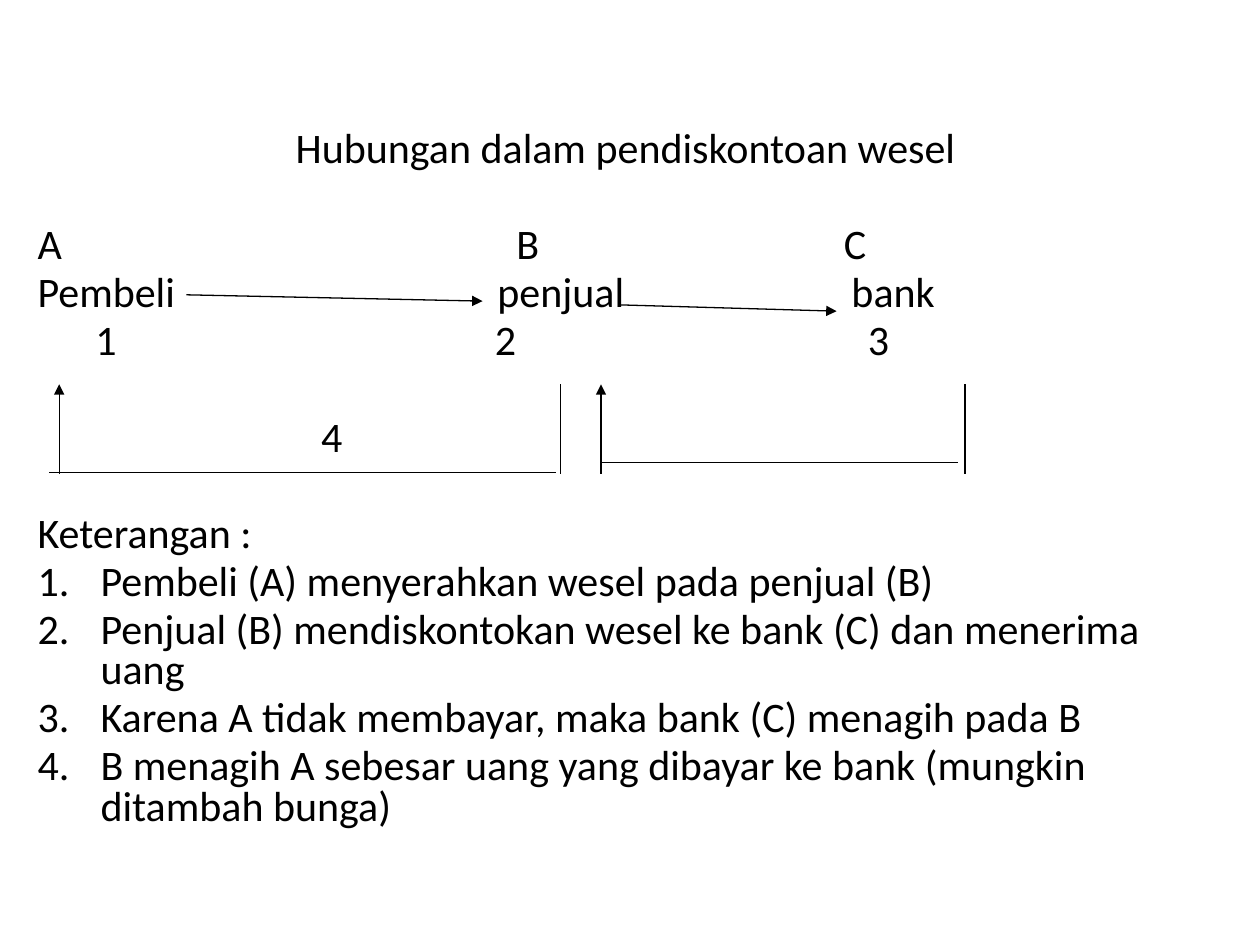
from dataclasses import dataclass

from lxml.etree import SubElement
from pptx import Presentation
from pptx.dml.color import RGBColor
from pptx.enum.shapes import MSO_CONNECTOR
from pptx.enum.text import MSO_ANCHOR, PP_ALIGN
from pptx.oxml.ns import qn
from pptx.util import Inches, Pt

FONT, INK = "Calibri", "000000"
TEXT_SIZE = 24
GAP = 4.35       # space before each paragraph, points
ROW = 27.8       # one full text row, points
HANGING = 0.5    # indent of the numbered list, inches


@dataclass
class Row:
    text: str
    tabs: tuple[float, ...] = ()
    rows_above: int = 0
    centered: bool = False
    numbered: bool = False


@dataclass
class Link:
    start: tuple[float, float]
    end: tuple[float, float]
    arrow: bool = False


ROWS = [
    Row("Hubungan dalam pendiskontoan wesel", centered=True),
    # Parties and step numbers, set in columns by tab stops
    Row("A\tB\tC", (3.8, 6.4), rows_above=1),
    Row("Pembeli\tpenjual\tbank", (3.65, 6.46)),
    Row("\t1\t2\t3", (0.46, 3.63, 6.59)),
    Row("\t4", (2.25,), rows_above=1),
    # Explanation
    Row("Keterangan :", rows_above=1),
    Row("Pembeli (A) menyerahkan wesel pada penjual (B)", numbered=True),
    Row("Penjual (B) mendiskontokan wesel ke bank (C) dan menerima uang", numbered=True),
    Row("Karena A tidak membayar, maka bank (C) menagih pada B", numbered=True),
    Row("B menagih A sebesar uang yang dibayar ke bank (mungkin ditambah bunga)",
        numbered=True),
]

TOP, BOTTOM = 3.05, 3.76  # span of the upright lines
LINKS = [
    # Note handed from buyer to seller to bank
    Link((1.48, 2.34), (3.83, 2.39), arrow=True),
    Link((4.92, 2.42), (6.64, 2.47), arrow=True),
    # Claim from bank back to seller
    Link((7.66, TOP), (7.66, BOTTOM)),
    Link((7.6, 3.67), (4.77, 3.67)),
    Link((4.77, BOTTOM), (4.77, TOP), arrow=True),
    # Claim from seller back to buyer
    Link((4.45, TOP), (4.45, BOTTOM)),
    Link((4.41, 3.75), (0.39, 3.75)),
    Link((0.47, BOTTOM), (0.47, TOP), arrow=True),
]


def color(hex_code: str) -> RGBColor:
    return RGBColor.from_string(hex_code)


def write_row(paragraph, row: Row) -> None:
    paragraph.line_spacing = 0.8
    paragraph.space_before = Pt(GAP + row.rows_above * ROW)
    paragraph.alignment = PP_ALIGN.CENTER if row.centered else PP_ALIGN.LEFT

    properties = paragraph._p.get_or_add_pPr()
    if row.numbered:
        properties.set("marL", str(Inches(HANGING)))
        properties.set("indent", str(Inches(-HANGING)))
        SubElement(properties, qn("a:buFont"), typeface="+mj-lt")
        SubElement(properties, qn("a:buAutoNum"), type="arabicPeriod")
    if row.tabs:
        tab_list = SubElement(properties, qn("a:tabLst"))
        for position in row.tabs:
            SubElement(tab_list, qn("a:tab"), pos=str(Inches(position)), algn="l")

    run = paragraph.add_run()
    run.text = row.text
    run.font.name = FONT
    run.font.size = Pt(TEXT_SIZE)
    run.font.color.rgb = color(INK)


def draw_link(slide, link: Link) -> None:
    ends = [Inches(value) for value in (*link.start, *link.end)]
    connector = slide.shapes.add_connector(MSO_CONNECTOR.STRAIGHT, *ends)
    connector.line.color.rgb = color(INK)
    connector.line.width = Pt(0.75)
    if link.arrow:
        SubElement(connector.line._get_or_add_ln(), qn("a:tailEnd"), type="triangle")
    SubElement(connector._element.spPr, qn("a:effectLst"))


def main() -> None:
    deck = Presentation()
    deck.slide_width, deck.slide_height = Inches(10), Inches(7.5)
    slide = deck.slides.add_slide(deck.slide_layouts[6])

    # Text
    body = slide.shapes.add_textbox(Inches(0.2), Inches(0.99), Inches(9.53), Inches(5.99))
    frame = body.text_frame
    frame.word_wrap = True
    frame.vertical_anchor = MSO_ANCHOR.TOP
    for index, row in enumerate(ROWS):
        write_row(frame.add_paragraph() if index else frame.paragraphs[0], row)

    # Arrows and lines
    for link in LINKS:
        draw_link(slide, link)

    deck.save("out.pptx")


if __name__ == "__main__":
    main()
